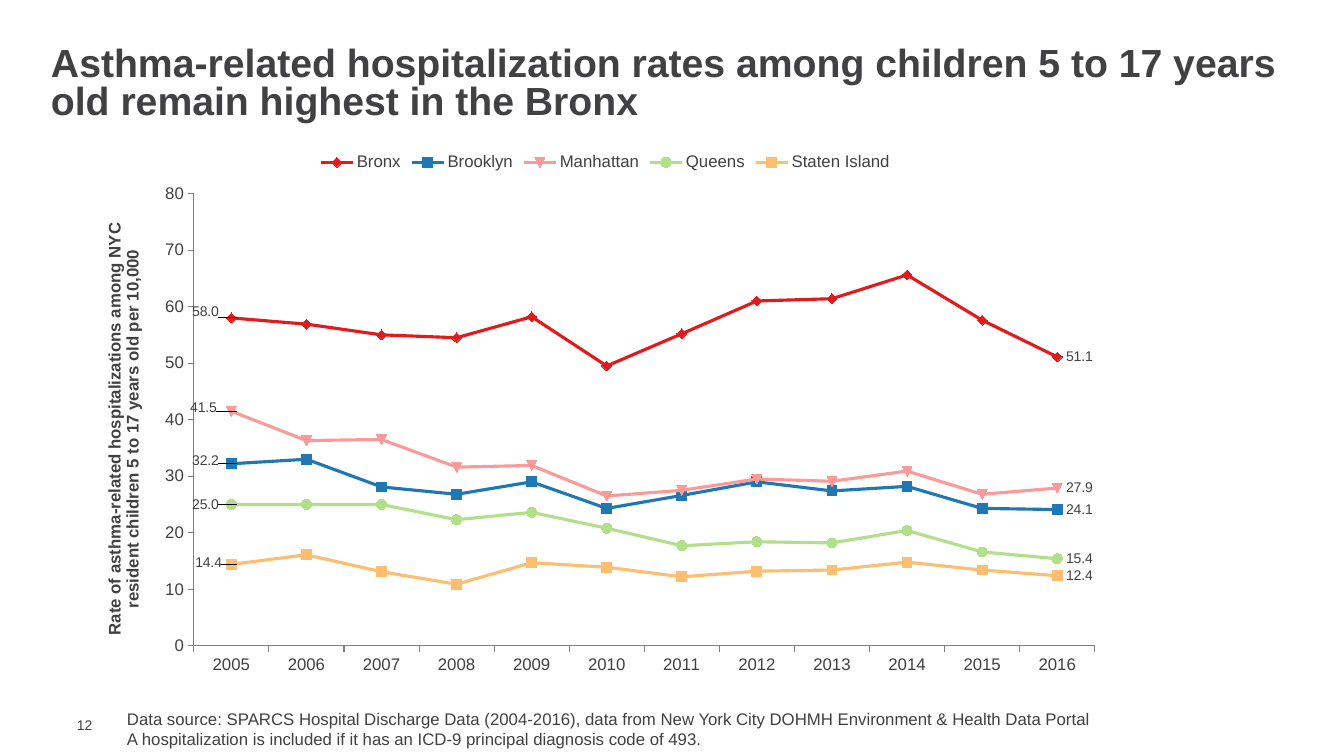
"""Build the slide on asthma-related hospitalization rates by borough."""
import dataclasses

import lxml.etree
import pptx
import pptx.chart.data
import pptx.dml.color
import pptx.enum.chart
import pptx.enum.text
import pptx.oxml
import pptx.oxml.ns
import pptx.util

EMU_PER_PX = 914400 / 100.8
CHART_BOX = (101, 142, 1009, 549)
PLOT_AREA = {"x": 0.092, "y": 0.094, "w": 0.893, "h": 0.824}
YEARS = [str(year) for year in range(2005, 2017)]
MARKER = pptx.enum.chart.XL_MARKER_STYLE
CHART_NAMESPACE = pptx.oxml.ns.nsdecls("c")


@dataclasses.dataclass(frozen=True)
class Theme:
    font: str = "Arial"
    text: str = "414042"
    axis: str = "808080"
    title_size: int = 28
    body_size: int = 12
    small_size: int = 10
    line_width: float = 2.25
    axis_width: float = 0.75
    marker_size: int = 7


@dataclasses.dataclass(frozen=True)
class Borough:
    name: str
    color: str
    marker: object
    first_label_shift: tuple
    rates: tuple


THEME = Theme()
BOROUGHS = (
    Borough("Bronx", "E31A1C", MARKER.DIAMOND, (-48, -6),
            (58, 56.9, 55, 54.5, 58.2, 49.5, 55.2, 61, 61.4, 65.6, 57.6, 51.1)),
    Borough("Brooklyn", "1F78B4", MARKER.SQUARE, (-48, -3),
            (32.2, 33, 28.1, 26.8, 29, 24.3, 26.6, 29, 27.4, 28.2, 24.3, 24.1)),
    Borough("Manhattan", "FB9A99", None, (-50, -3),
            (41.5, 36.3, 36.5, 31.6, 31.9, 26.5, 27.5, 29.5, 29.1, 30.9, 26.8, 27.9)),
    Borough("Queens", "B2DF8A", MARKER.CIRCLE, (-48, 0),
            (25, 25, 25, 22.3, 23.6, 20.8, 17.7, 18.4, 18.2, 20.4, 16.6, 15.4)),
    Borough("Staten Island", "FDBF6F", MARKER.SQUARE, (-45, -2),
            (14.4, 16.1, 13.1, 10.9, 14.7, 13.9, 12.2, 13.2, 13.4, 14.8, 13.4, 12.4)),
)


def px(length):
    """Turn pixels into EMU."""
    return pptx.util.Emu(round(length * EMU_PER_PX))


def rgb(color):
    """Turn a hex string into a colour."""
    return pptx.dml.color.RGBColor.from_string(color)


def set_font(font, size, bold=False):
    """Apply the theme's typeface and text colour at a size."""
    font.name = THEME.font
    font.size = pptx.util.Pt(size)
    font.bold = bold
    font.color.rgb = rgb(THEME.text)


def add_text(slide, text, box, size=THEME.body_size, bold=False, line_spacing=None,
             anchor=pptx.enum.text.MSO_ANCHOR.TOP, margins=(10, 5, 10, 5)):
    """Add a wrapped text box, one paragraph per line of text."""
    shape = slide.shapes.add_textbox(*map(px, box))
    frame = shape.text_frame
    frame.word_wrap = True
    frame.vertical_anchor = anchor
    (frame.margin_left, frame.margin_top,
     frame.margin_right, frame.margin_bottom) = map(px, margins)
    frame.text = text
    for paragraph in frame.paragraphs:
        paragraph.line_spacing = line_spacing
        for run in paragraph.runs:
            set_font(run.font, size, bold)


def manual_layout(target="", **values):
    """Make a chart layout element from fractions of the chart."""
    parts = "".join(f'<c:{key} val="{value:.4f}"/>' for key, value in values.items())
    return pptx.oxml.parse_xml(
        f"<c:layout {CHART_NAMESPACE}><c:manualLayout>{target}{parts}"
        "</c:manualLayout></c:layout>")


def place_plot(chart):
    """Fix the inner plot area inside the chart."""
    plot_area = chart._chartSpace.chart.plotArea
    for layout in plot_area.findall(pptx.oxml.ns.qn("c:layout")):
        plot_area.remove(layout)
    target = ('<c:layoutTarget val="inner"/><c:xMode val="edge"/>'
              '<c:yMode val="edge"/>')
    plot_area.insert(0, manual_layout(target, **PLOT_AREA))


def show_leader_lines(labels):
    """Turn on leader lines for moved labels."""
    labels.append(lxml.etree.fromstring(
        f'<c:extLst {CHART_NAMESPACE}>'
        '<c:ext uri="{CE6537A1-D6FC-4f65-9D91-7224C49458BB}" '
        'xmlns:c15="http://schemas.microsoft.com/office/drawing/2012/chart">'
        '<c15:showLeaderLines val="1"/></c:ext></c:extLst>'))


def label_ends(series, shift):
    """Label the first and last points, moving the first label left."""
    labels = series.data_labels
    labels.show_value = False
    labels.number_format = "0.0"
    labels.number_format_is_linked = False
    set_font(labels.font, THEME.small_size)
    for index in (0, len(YEARS) - 1):
        label = series.points[index].data_label
        set_font(label.font, THEME.small_size)
        label.position = pptx.enum.chart.XL_LABEL_POSITION.RIGHT
    first = labels._element.find(pptx.oxml.ns.qn("c:dLbl"))
    first.insert(1, manual_layout(x=shift[0] / CHART_BOX[2], y=shift[1] / CHART_BOX[3]))
    show_leader_lines(labels._element)


def style_series(series, borough):
    """Colour one borough's line and markers."""
    series.smooth = False
    series.format.line.color.rgb = rgb(borough.color)
    series.format.line.width = pptx.util.Pt(THEME.line_width)
    marker = series.marker
    if borough.marker is not None:
        marker.style = borough.marker
    marker.size = THEME.marker_size
    marker.format.fill.solid()
    marker.format.fill.fore_color.rgb = rgb(borough.color)
    marker.format.line.color.rgb = rgb(borough.color)
    label_ends(series, borough.first_label_shift)


def style_axis(axis):
    """Give an axis its ticks, line and font."""
    axis.has_major_gridlines = False
    axis.major_tick_mark = pptx.enum.chart.XL_TICK_MARK.OUTSIDE
    axis.minor_tick_mark = pptx.enum.chart.XL_TICK_MARK.NONE
    axis.format.line.color.rgb = rgb(THEME.axis)
    axis.format.line.width = pptx.util.Pt(THEME.axis_width)
    set_font(axis.tick_labels.font, THEME.body_size)


def add_rate_chart(slide):
    """Add the line chart of rates by borough and year."""
    data = pptx.chart.data.CategoryChartData(number_format="0.0")
    data.categories = YEARS
    for borough in BOROUGHS:
        data.add_series(borough.name, borough.rates)
    chart = slide.shapes.add_chart(
        pptx.enum.chart.XL_CHART_TYPE.LINE_MARKERS, *map(px, CHART_BOX), data).chart
    set_font(chart.font, THEME.small_size)
    chart.has_title = False
    chart.has_legend = True
    chart.legend.position = pptx.enum.chart.XL_LEGEND_POSITION.TOP
    chart.legend.include_in_layout = False
    set_font(chart.legend.font, THEME.body_size)
    chart.plots[0].vary_by_categories = False
    for series, borough in zip(chart.plots[0].series, BOROUGHS):
        style_series(series, borough)
    for axis in (chart.category_axis, chart.value_axis):
        style_axis(axis)
    rates = chart.value_axis
    rates.minimum_scale, rates.maximum_scale, rates.major_unit = 0, 80, 10
    rates.tick_labels.number_format = "0"
    rates.tick_labels.number_format_is_linked = False
    frame = rates.axis_title.text_frame
    frame.text = ("Rate of asthma-related hospitalizations among NYC "
                  "resident children 5 to 17 years old per 10,000")
    set_font(frame.paragraphs[0].runs[0].font, THEME.body_size, bold=True)
    place_plot(chart)


def main():
    """Build and save the slide."""
    presentation = pptx.Presentation()
    presentation.slide_width, presentation.slide_height = px(1344), px(756)
    slide = presentation.slides.add_slide(presentation.slide_layouts[6])
    middle = pptx.enum.text.MSO_ANCHOR.MIDDLE
    add_text(slide, "Asthma-related hospitalization rates among children 5 to 17 years "
             "old remain highest in the Bronx", (41, 42, 1301, 86),
             size=THEME.title_size, bold=True, line_spacing=0.8, anchor=middle)
    add_rate_chart(slide)
    add_text(slide, "Data source: SPARCS Hospital Discharge Data (2004-2016), data from "
             "New York City DOHMH Environment & Health Data Portal\n"
             "A hospitalization is included if it has an ICD-9 principal diagnosis "
             "code of 493.", (117, 704, 1000, 50))
    add_text(slide, "12", (67, 716, 43, 17), size=THEME.small_size, anchor=middle,
             margins=(10, 0, 0, 0))
    presentation.save("out.pptx")


if __name__ == "__main__":
    main()
